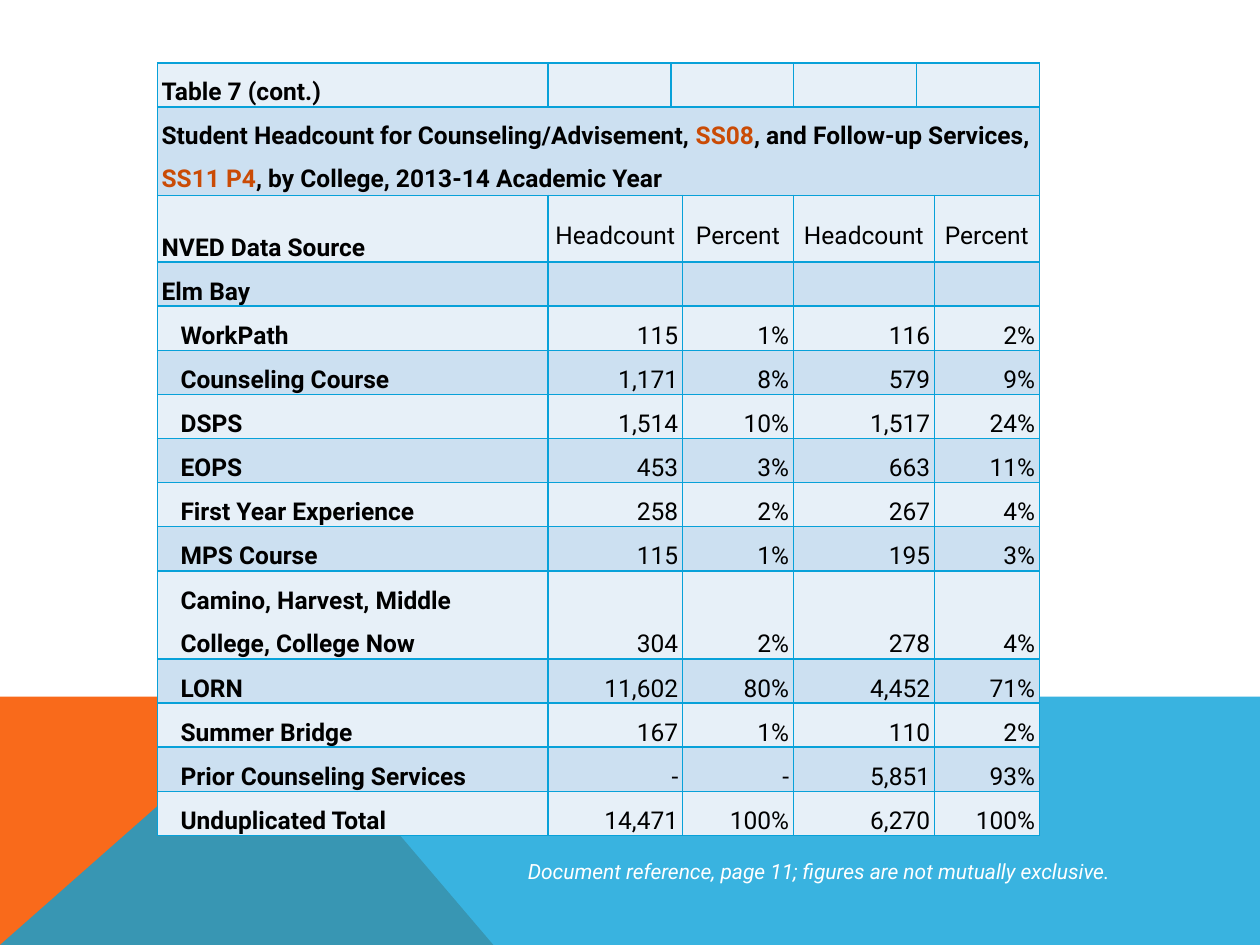
import dataclasses

import lxml.etree
import pptx
import pptx.dml.color
import pptx.enum.text
import pptx.oxml.ns
import pptx.util

Pt = pptx.util.Pt
Align = pptx.enum.text.PP_ALIGN
Anchor = pptx.enum.text.MSO_ANCHOR
qn = pptx.oxml.ns.qn


@dataclasses.dataclass(frozen=True)
class Theme:
    font: str = "Roboto"
    table_size: int = 14
    note_size: int = 12
    text: str = "000000"
    note: str = "FFFFFF"
    code: str = "CA4B05"
    orange: str = "F96A1B"
    blue: str = "08A1D9"
    bands: tuple = ("E7F0F8", "CCE0F1")


def rgb(color):
    return pptx.dml.color.RGBColor.from_string(color)


class SlideBuilder:
    def __init__(self, slide, theme):
        self.slide = slide
        self.theme = theme

    def polygon(self, points, color, opacity=100):
        builder = self.slide.shapes.build_freeform(*points[0], scale=Pt(1))
        builder.add_line_segments(points[1:], close=True)
        shape = builder.convert_to_shape()
        shape.shadow.inherit = False
        shape.line.fill.background()
        shape.fill.solid()
        shape.fill.fore_color.rgb = rgb(color)
        if opacity < 100:
            color_node = next(shape.fill._xPr.iter(qn("a:srgbClr")))
            alpha = lxml.etree.SubElement(color_node, qn("a:alpha"))
            alpha.set("val", str(opacity * 1000))

    def style(self, para, size, color, bold=False, italic=False):
        para.font.name = self.theme.font
        para.font.size = Pt(size)
        para.font.color.rgb = rgb(color)
        para.font.bold = bold
        para.font.italic = italic

    def note(self, text, left, top, width, height):
        box = self.slide.shapes.add_textbox(Pt(left), Pt(top), Pt(width), Pt(height))
        box.text_frame.word_wrap = True
        para = box.text_frame.paragraphs[0]
        para.add_run().text = text
        self.style(para, self.theme.note_size, self.theme.note, italic=True)

    def table(self, left, top, widths, heights):
        frame = self.slide.shapes.add_table(
            len(heights), len(widths), Pt(left), Pt(top), Pt(sum(widths)), Pt(sum(heights)))
        table = frame.table
        table.first_row = table.horz_banding = False
        for column, width in zip(table.columns, widths):
            column.width = Pt(width)
        for index, (row, height) in enumerate(zip(table.rows, heights)):
            row.height = Pt(height)
            for cell in row.cells:
                self.format_cell(cell, self.theme.bands[index % 2])
        return table

    def format_cell(self, cell, color):
        cell.margin_left = cell.margin_right = Pt(2.4)
        cell.margin_top = cell.margin_bottom = 0
        cell.fill.solid()
        cell.fill.fore_color.rgb = rgb(color)
        properties = cell._tc.get_or_add_tcPr()
        for position, side in enumerate(("lnL", "lnR", "lnT", "lnB")):
            line = lxml.etree.Element(qn("a:" + side), w=str(Pt(1)))
            fill = lxml.etree.SubElement(line, qn("a:solidFill"))
            lxml.etree.SubElement(fill, qn("a:srgbClr"), val=self.theme.blue)
            properties.insert(position, line)

    def cell_text(self, cell, lines, bold=False, align=Align.LEFT,
                  anchor=Anchor.BOTTOM, indent=0):
        """Each line is a list of (text, colour) spans."""
        cell.vertical_anchor = anchor
        for index, spans in enumerate(lines):
            frame = cell.text_frame
            para = frame.add_paragraph() if index else frame.paragraphs[0]
            para.alignment = align
            para.line_spacing = 1.5
            if indent:
                para._p.get_or_add_pPr().set("indent", str(Pt(indent)))
            self.style(para, self.theme.table_size, self.theme.text, bold)
            for text, color in spans:
                span = para.add_run()
                span.text = text
                if color:
                    span.font.color.rgb = rgb(color)


def plain(text):
    return [[(line, None)] for line in text.split("\n")]


HEADINGS = ("Headcount", "Percent", "Headcount", "Percent")
SERVICES = [
    ("WorkPath", "115", "1%", "116", "2%"),
    ("Counseling Course", "1,171", "8%", "579", "9%"),
    ("DSPS", "1,514", "10%", "1,517", "24%"),
    ("EOPS", "453", "3%", "663", "11%"),
    ("First Year Experience", "258", "2%", "267", "4%"),
    ("MPS Course", "115", "1%", "195", "3%"),
    ("Camino, Harvest, Middle\nCollege, College Now", "304", "2%", "278", "4%"),
    ("LORN", "11,602", "80%", "4,452", "71%"),
    ("Summer Bridge", "167", "1%", "110", "2%"),
    ("Prior Counseling Services", "-", "-", "5,851", "93%"),
    ("Unduplicated Total", "14,471", "100%", "6,270", "100%"),
]
COLUMN_WIDTHS = [223.2, 70.2, 6.6, 63.4, 70.3, 10.3, 60]
VALUE_COLUMNS = (1, 3, 4, 6)
LINE_HEIGHT = 25.2
FIRST_SERVICE_ROW = 4


def main():
    deck = pptx.Presentation()
    deck.slide_width, deck.slide_height = Pt(720), Pt(540)
    theme = Theme()
    page = SlideBuilder(deck.slides.add_slide(deck.slide_layouts[6]), theme)

    # Coloured band along the bottom
    band_top, corner = 397.5, 160.6
    page.polygon([(0, 540), (0, band_top), (corner, band_top), (281.5, 540)], theme.orange)
    page.polygon([(0, 540), (corner, band_top), (720, band_top), (720, 540)], theme.blue, 80)

    # Table grid and merged cells
    heights = [LINE_HEIGHT, 2 * LINE_HEIGHT, 38.2, LINE_HEIGHT]
    heights += [LINE_HEIGHT * len(plain(service[0])) for service in SERVICES]
    table = page.table(90, 36, COLUMN_WIDTHS, heights)
    merges = [(0, 2, 3), (0, 5, 6), (1, 0, 6)]
    merges += [(row, first, first + 1) for row in range(2, len(heights)) for first in (1, 4)]
    for row, first, last in merges:
        table.cell(row, first).merge(table.cell(row, last))

    # Table title and headings
    page.cell_text(table.cell(0, 0), plain("Table 7 (cont.)"), bold=True)
    title = [
        ("Student Headcount for Counseling/Advisement, ", None),
        ("SS08", theme.code),
        (", and Follow-up Services, ", None),
        ("SS11 P4", theme.code),
        (", by College, 2013-14 Academic Year", None),
    ]
    page.cell_text(table.cell(1, 0), [title], bold=True, anchor=Anchor.TOP)
    page.cell_text(table.cell(2, 0), plain("NVED Data Source"), bold=True)
    for column, heading in zip(VALUE_COLUMNS, HEADINGS):
        page.cell_text(table.cell(2, column), plain(heading),
                       align=Align.CENTER, anchor=Anchor.MIDDLE)
    page.cell_text(table.cell(3, 0), plain("Elm Bay"), bold=True)

    # Service rows
    for row, (name, *values) in enumerate(SERVICES, FIRST_SERVICE_ROW):
        page.cell_text(table.cell(row, 0), plain(name), bold=True, indent=10.8)
        for column, value in zip(VALUE_COLUMNS, values):
            page.cell_text(table.cell(row, column), plain(value), align=Align.RIGHT)

    # Source note
    page.note("Document reference, page 11; figures are not mutually exclusive.",
              294.5, 487.2, 382.3, 21.6)

    deck.save("out.pptx")


if __name__ == "__main__":
    main()
